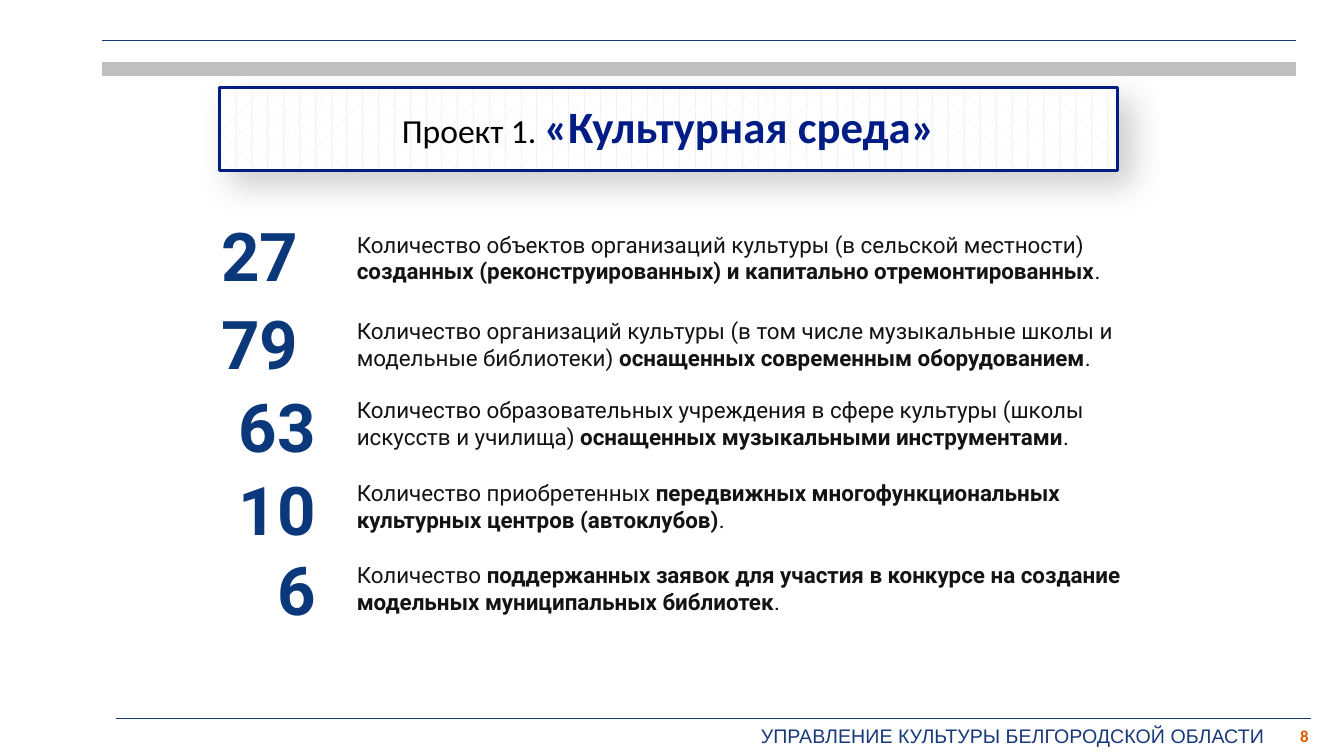
from dataclasses import dataclass

from pptx import Presentation
from pptx.dml.color import RGBColor as Rgb
from pptx.enum.dml import MSO_PATTERN as Pat
from pptx.enum.shapes import MSO_CONNECTOR as Con
from pptx.enum.text import MSO_ANCHOR as Anc, MSO_AUTO_SIZE as Fit, PP_ALIGN as Al
from pptx.oxml import parse_xml
from pptx.util import Cm, Pt

NS = 'xmlns:a="http://schemas.openxmlformats.org/drawingml/2006/main"'
SHADE = (
    f'<a:effectLst {NS}><a:outerShdw blurRad="{Pt(24)}" dist="{Pt(12)}" '
    'dir="2700000" algn="ctr" rotWithShape="0"><a:srgbClr val="000000">'
    '<a:alpha val="20000"/></a:srgbClr></a:outerShdw></a:effectLst>'
)


@dataclass(frozen=True)
class Theme:
    blue: str = "18397A"
    navy: str = "001C85"
    deep: str = "0A387A"
    gray: str = "BFBFBF"
    pale: str = "F2F2F2"
    white: str = "FFFFFF"
    black: str = "000000"
    ink: str = "141313"
    rust: str = "DE5A00"
    page: int = 12
    foot: int = 14
    body: int = 16
    lead: int = 24
    head: int = 32
    count: int = 48


def put(item, **form):
    for key, value in form.items():
        setattr(item, key, value)


class Deck:
    def __init__(self, look):
        self.look = look
        self.file = Presentation()
        put(self.file, slide_width=Cm(33.86), slide_height=Cm(19.05))
        self.slide = self.file.slides.add_slide(self.file.slide_layouts[5])

    def font(self, name, size, color, bold=False):
        return dict(name=name, size=Pt(size), bold=bold, color=color)

    def add_run(self, para, text, font):
        run = para.add_run()
        run.text = text
        put(run.font, **{k: v for k, v in font.items() if k != "color"})
        run.font.color.rgb = Rgb.from_string(font["color"])

    def line(self, left, right, top, color, width):
        bar = self.slide.shapes.add_connector(
            Con.STRAIGHT, Cm(left), Cm(top), Cm(right), Cm(top))
        bar.line.color.rgb = Rgb.from_string(color)
        bar.line.width = Pt(width)
        bar._element.spPr.append(parse_xml(f"<a:effectLst {NS}/>"))

    def text(self, spot, paras, align=Al.LEFT, **frame):
        box = self.slide.shapes.add_textbox(*map(Cm, spot)).text_frame
        put(box, **{"word_wrap": True, **frame})
        for i, runs in enumerate(paras):
            para = box.add_paragraph() if i else box.paragraphs[0]
            para.alignment = align
            for text, font in runs:
                self.add_run(para, text, font)

    def title(self, spot, runs):
        look, head = self.look, self.slide.shapes.title
        put(head, **dict(zip(("left", "top", "width", "height"), map(Cm, spot))))
        head.fill.patterned()
        head.fill.pattern = Pat.DIVOT
        head.fill.fore_color.rgb = Rgb.from_string(look.pale)
        head.fill.back_color.rgb = Rgb.from_string(look.white)
        head.line.color.rgb = Rgb.from_string(look.navy)
        head.line.width = Pt(2.25)
        head._element.spPr.append(parse_xml(SHADE))
        sides = ("left", "top", "right", "bottom")
        put(head.text_frame, auto_size=Fit.NONE, word_wrap=True,
            vertical_anchor=Anc.MIDDLE,
            **{f"margin_{side}": Cm(0.33) for side in sides})
        para = head.text_frame.paragraphs[0]
        put(para, alignment=Al.CENTER, line_spacing=0.9)
        for text, font in runs:
            self.add_run(para, text, font)


ROWS = [
    ("27", 5.28, 0.69, 5.69, 21.13, [
        [("Количество объектов организаций культуры (в сельской местности)", 0)],
        [("созданных (реконструированных) и капитально отремонтированных", 1),
         (".", 0)]]),
    ("79", 7.49, 0.69, 7.87, 20.62, [
        [("Количество организаций культуры (в том числе музыкальные школы "
          "и модельные библиотеки) ", 0),
         ("оснащенных современным оборудованием", 1), (".", 0)]]),
    ("63", 9.58, 0.25, 9.86, 19.25, [
        [("Количество образовательных учреждения в сфере культуры "
          "(школы искусств и училища) ", 0),
         ("оснащенных музыкальными инструментами", 1), (".", 0)]]),
    ("10", 11.68, 0.25, 11.96, 20.42, [
        [("Количество приобретенных ", 0),
         ("передвижных многофункциональных культурных центров (автоклубов)", 1),
         (".", 0)]]),
    ("6", 13.69, 0.25, 14.02, 20.42, [
        [("Количество ", 0),
         ("поддержанных заявок для участия в конкурсе на создание "
          "модельных муниципальных библиотек", 1), (".", 0)]]),
]


def main():
    look = Theme()
    deck = Deck(look)
    font = deck.font

    deck.line(2.57, 32.66, 1.02, look.blue, 1)
    deck.line(2.57, 32.66, 1.73, look.gray, 10)
    deck.line(2.92, 33.02, 18.11, look.blue, 1)

    deck.title((5.54, 2.21, 22.61, 2.08), [
        ("Проект 1. ", font("Calibri", look.lead, look.black)),
        ("«Культурная среда»", font("Calibri", look.head, look.navy, True))])

    big = font("Roboto", look.count, look.deep, True)
    tones = [font("Roboto", look.body, look.ink, bold) for bold in (False, True)]
    for count, top, pad, base, width, paras in ROWS:
        deck.text((2.24, top, 5.97, 2.18), [[(count, big)]], Al.RIGHT,
                  margin_right=Cm(pad), margin_bottom=0)
        deck.text((8.74, base, width, 1.63),
                  [[(text, tones[bold]) for text, bold in runs] for runs in paras])

    deck.text((18.92, 18.11, 13.31, 0.86),
              [[("УПРАВЛЕНИЕ КУЛЬТУРЫ БЕЛГОРОДСКОЙ ОБЛАСТИ",
                 font("Arial", look.foot, look.blue))]],
              word_wrap=False, auto_size=Fit.SHAPE_TO_FIT_TEXT)
    deck.text((32.23, 18.03, 0.99, 1.02),
              [[("8", font("Calibri", look.page, look.rust, True))]],
              Al.RIGHT, vertical_anchor=Anc.MIDDLE)

    deck.file.save("out.pptx")


if __name__ == "__main__":
    main()
